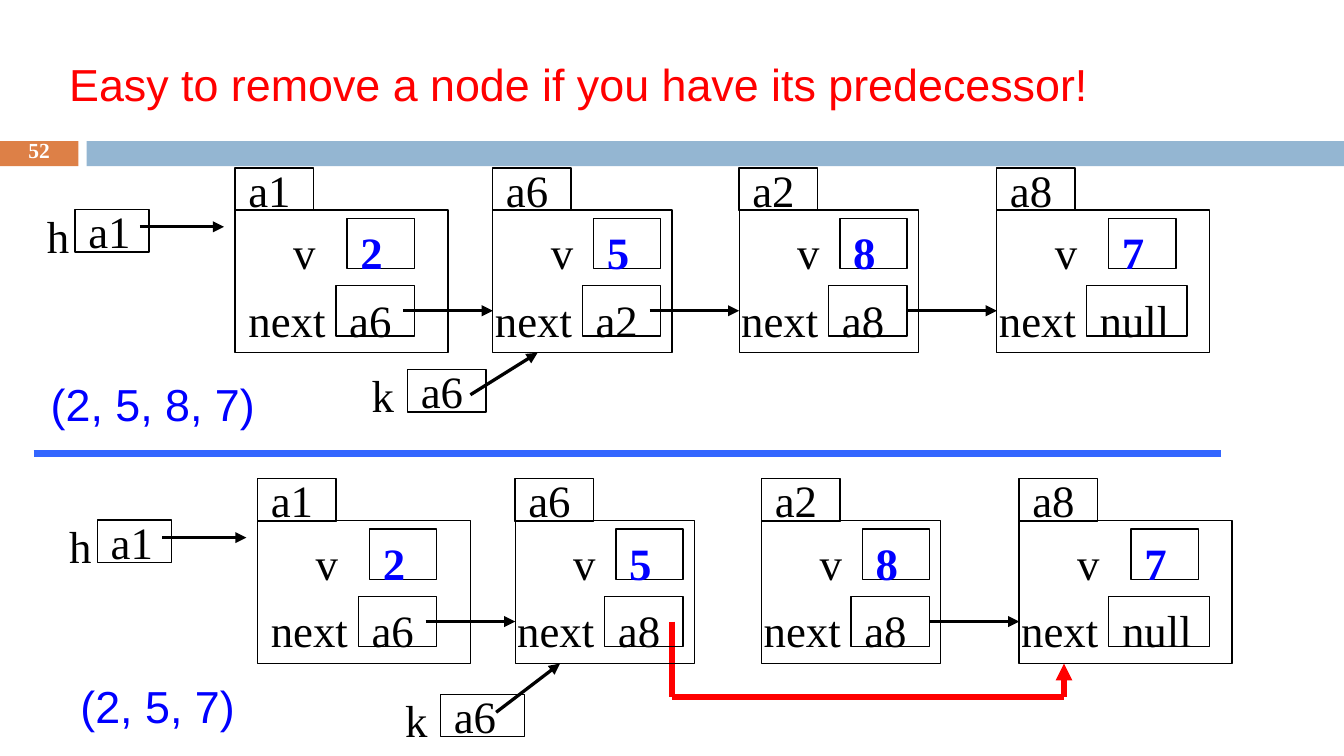
import dataclasses
from typing import Optional

import lxml.etree
import pptx
import pptx.dml.color
import pptx.enum.shapes
import pptx.enum.text
import pptx.oxml.ns
import pptx.util

PX = 3810
SERIF = "Times New Roman"
SANS = "Arial"
BLACK = "000000"
BLUE = "0000FF"
RED = "FF0000"
WHITE = "FFFFFF"
ANCHOR = pptx.enum.text.MSO_ANCHOR
ALIGN = pptx.enum.text.PP_ALIGN


@dataclasses.dataclass(frozen=True)
class Node:
    name: str
    value: str
    target: str
    x: int
    width: int = 320
    value_dx: int = 180
    target_dx: int = 160
    target_width: int = 140
    next_dx: int = -20
    link_dx: Optional[int] = None


@dataclasses.dataclass(frozen=True)
class Variable:
    name: str
    value: str
    label: tuple[int, int, int, int]
    box: tuple[int, int, int, int]
    start: tuple[int, int]
    end: tuple[int, int]


def px(length: int) -> int:
    return pptx.util.Emu(length * PX)


def paint(colour_format, colour: str) -> None:
    colour_format.rgb = pptx.dml.color.RGBColor.from_string(colour)


def write(shape, text: str, *, size: float = 24, font: str = SERIF, colour: str = BLACK,
          bold: bool = False, anchor=ANCHOR.TOP, align=ALIGN.LEFT, spacing: Optional[float] = None):
    frame = shape.text_frame
    frame.word_wrap = True
    frame.vertical_anchor = anchor
    para = frame.paragraphs[0]
    para.alignment = align
    para.line_spacing = spacing
    span = para.add_run()
    span.text = text
    span.font.size = pptx.util.Pt(size)
    span.font.name = font
    span.font.bold = bold
    paint(span.font.color, colour)


def add_label(page, x: int, y: int, width: int, height: int, text: str, **text_format) -> None:
    box = page.shapes.add_textbox(px(x), px(y), px(width), px(height))
    write(box, text, **text_format)


def add_box(page, x: int, y: int, width: int, height: int, text: str = "",
            fill: Optional[str] = None, **text_format):
    box = page.shapes.add_shape(pptx.enum.shapes.MSO_SHAPE.RECTANGLE,
                                px(x), px(y), px(width), px(height))
    box.shadow.inherit = False
    if fill:
        box.fill.solid()
        paint(box.fill.fore_color, fill)
        box.line.fill.background()
    else:
        box.fill.background()
        paint(box.line.color, BLACK)
        box.line.width = pptx.util.Pt(0.75)
    if text:
        write(box, text, **text_format)
    return box


def add_line(page, start: tuple[int, int], end: tuple[int, int], colour: str = BLACK,
             weight: float = 1.75, arrow: bool = True):
    line = page.shapes.add_connector(pptx.enum.shapes.MSO_CONNECTOR.STRAIGHT,
                                     *map(px, start + end))
    paint(line.line.color, colour)
    line.line.width = pptx.util.Pt(weight)
    properties = line._element.spPr
    if arrow:
        outline = properties.find(pptx.oxml.ns.qn("a:ln"))
        lxml.etree.SubElement(outline, pptx.oxml.ns.qn("a:tailEnd"), type="triangle")
    lxml.etree.SubElement(properties, pptx.oxml.ns.qn("a:effectLst"))
    return line


def add_node(page, node: Node, dx: int, y: int) -> None:
    x = node.x + dx
    add_box(page, x + node.value_dx, y + 90, 120, 90, node.value, colour=BLUE, bold=True)
    add_box(page, x, y, 140, 76, node.name, anchor=ANCHOR.MIDDLE)
    target = add_box(page, x + node.target_dx, y + 210, node.target_width, 90, node.target)
    add_label(page, x + 80, y + 90, 100, 90, "v")
    add_label(page, x + node.next_dx, y + 210, 200, 90, "next")
    add_box(page, x, y + 75, node.width, 255)
    if node.link_dx is not None:
        start = x + node.link_dx
        link = add_line(page, (start, y + 255), (start + 160, y + 255))
        if node.link_dx == node.target_dx + node.target_width:
            link.begin_connect(target, 3)


def add_variable(page, variable: Variable) -> None:
    add_label(page, *variable.label, variable.name)
    add_box(page, *variable.box, variable.value, anchor=ANCHOR.MIDDLE)
    add_line(page, variable.start, variable.end)


def add_list(page, nodes: list[Node], dx: int, y: int) -> None:
    add_variable(page, Variable("h", "a1", (60 + dx, y + 60, 84, 90), (134 + dx, y + 74, 132, 76),
                                (250 + dx, y + 105), (400 + dx, y + 105)))
    for node in nodes:
        add_node(page, node, dx, y)


def main() -> None:
    deck = pptx.Presentation()
    deck.slide_width, deck.slide_height = px(2400), px(1350)
    page = deck.slides.add_slide(deck.slide_layouts[6])

    add_box(page, 0, 252, 140, 45, fill="DD8047")
    add_box(page, 155, 252, 2245, 45, fill="94B6D2")
    add_label(page, 0, 249, 140, 48, "52", size=11.5, colour=WHITE, bold=True,
              anchor=ANCHOR.MIDDLE, align=ALIGN.CENTER, spacing=0.8)
    add_label(page, 100, 90, 2240, 115, "Easy to remove a node if you have its predecessor!",
              font=SANS, colour=RED)

    before = [
        Node("a1", "2", "a6", 420, width=380, value_dx=200, target_dx=180, next_dx=0, link_dx=300),
        Node("a6", "5", "a2", 880, link_dx=280),
        Node("a2", "8", "a8", 1320, link_dx=300),
        Node("a8", "7", "null", 1780, width=380, value_dx=200, target_width=180),
    ]
    after = [dataclasses.replace(node, target="a8", link_dx=None) if node.name == "a6" else node
             for node in before]

    add_list(page, before, 0, 300)
    add_variable(page, Variable("k", "a6", (640, 645, 88, 90), (728, 660, 140, 76),
                                (840, 705), (960, 630)))
    add_label(page, 67, 660, 450, 90, "(2, 5, 8, 7)", font=SANS, colour=BLUE)

    add_line(page, (60, 810), (2180, 810), "3366FF", 3.75, arrow=False)

    bypass = [(1200, 1110), (1200, 1245), (1900, 1245), (1900, 1185)]
    for start, end in zip(bypass, bypass[1:]):
        add_line(page, start, end, RED, 3, arrow=end == bypass[-1])
    add_list(page, after, 40, 855)
    add_variable(page, Variable("k", "a6", (700, 1225, 88, 90), (787, 1240, 150, 76),
                                (886, 1272), (1000, 1185)))
    add_label(page, 120, 1200, 355, 90, "(2, 5, 7)", font=SANS, colour=BLUE)

    deck.save("out.pptx")


if __name__ == "__main__":
    main()
